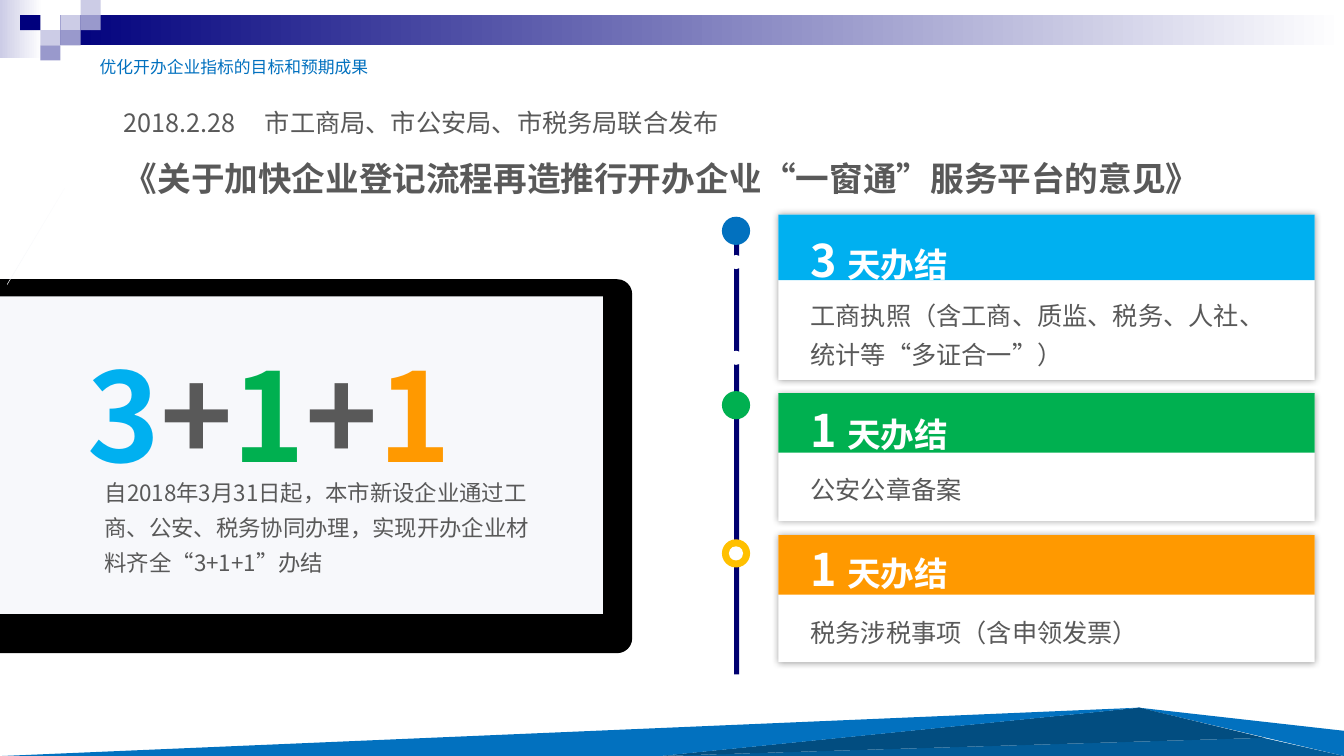
"""Build the slide on the 3+1+1 plan for opening a business."""
from typing import NamedTuple

from lxml import etree
from pptx import Presentation
from pptx.dml import color
from pptx.enum import shapes, text
from pptx.oxml import ns
from pptx.util import Emu, Pt

PX = 9144
SANS, DISPLAY = "Noto Sans CJK SC", "Noto Sans CJK JP"
WHITE, GREY, BLUE, NAVY = "FFFFFF", "595959", "0271BF", "00007D"
SKY, GREEN, ORANGE = "00B0F0", "00B050", "FF9900"
PALE, LILAC, SCREEN = "CCCCE6", "9999CC", "F7F8FB"
RECT = shapes.MSO_SHAPE.RECTANGLE
OVAL = shapes.MSO_SHAPE.OVAL
ROUNDED = shapes.MSO_SHAPE.ROUNDED_RECTANGLE


class Box(NamedTuple):
    """Left, top, width and height in px."""
    left: int
    top: int
    width: int
    height: int


class Span(NamedTuple):
    """A stretch of text in one format."""
    words: str
    size: int
    fill: str = GREY
    bold: bool = False
    font: str = SANS


class Line(NamedTuple):
    """A paragraph with its line height in points."""
    spans: list[Span]
    height: float
    tab: int = 0


class Card(NamedTuple):
    """A step: box, header, text position and wording."""
    box: Box
    header: Box
    title_top: int
    body_top: int
    days: str
    body: str
    fill: str


class Dot(NamedTuple):
    """A circle on the timeline."""
    top: int
    size: int
    fill: str


class Facet(NamedTuple):
    """A filled polygon."""
    points: list[tuple[int, int]]
    fill: str


TILES = [
    (60, 15, PALE), (80, 0, PALE), (80, 15, LILAC), (40, 30, PALE),
    (20, 15, NAVY), (60, 30, LILAC), (40, 45, LILAC),
]
CARDS = [
    Card(Box(772, 213, 532, 164), Box(772, 213, 532, 65), 208, 284, "3",
         "工商执照（含工商、质监、税务、人社、统计等“多证合一”）", SKY),
    Card(Box(772, 391, 532, 126), Box(772, 390, 532, 59), 377, 457, "1",
         "公安公章备案", GREEN),
    Card(Box(772, 531, 532, 126), Box(772, 531, 532, 59), 515, 599, "1",
         "税务涉税事项（含申领发票）", ORANGE),
]
DOTS = [
    Dot(183, 14, WHITE), Dot(388, 28, GREEN), Dot(348, 14, WHITE),
    Dot(535, 28, "FFC000"), Dot(542, 14, WHITE), Dot(253, 14, WHITE),
    Dot(215, 28, BLUE),
]
FACETS = [
    Facet([(1333, 750), (1129, 702), (1333, 725)], BLUE),
    Facet([(1333, 750), (1253, 732), (653, 750)], "025B98"),
    Facet([(1254, 732), (654, 750), (1130, 702)], "024D80"),
    Facet([(1131, 702), (2, 750), (655, 750)], BLUE),
    Facet([(64, 187), (7, 282), (7, 283)], SCREEN),
]


def rgb(value: str) -> color.RGBColor:
    """Turn a hex string into a colour."""
    return color.RGBColor.from_string(value)


def paint(shape, fill: str) -> None:
    """Fill a shape flatly, without outline or shadow."""
    shape.fill.solid()
    shape.fill.fore_color.rgb = rgb(fill)
    shape.line.fill.background()
    shape.shadow.inherit = False


def add_block(page, box: Box, fill: str, kind=RECT):
    """Add a flat preset shape."""
    shape = page.shapes.add_shape(kind, *(Emu(side * PX) for side in box))
    paint(shape, fill)
    return shape


def add_fade(page, box: Box, start: str) -> None:
    """Add a rectangle fading to white at the right."""
    shape = add_block(page, box, start)
    shape.fill.gradient()
    shape.fill.gradient_angle = 0
    for stop, tone in zip(shape.fill.gradient_stops, (start, WHITE)):
        stop.color.rgb = rgb(tone)


def add_glow(shape) -> None:
    """Give a shape a soft centred shadow."""
    effects = shape._element.spPr.find(ns.qn("a:effectLst"))
    shadow = etree.SubElement(effects, ns.qn("a:outerShdw"),
                              blurRad=str(Pt(5)), dist="0", algn="ctr", rotWithShape="0")
    tone = etree.SubElement(shadow, ns.qn("a:srgbClr"), val="000000")
    etree.SubElement(tone, ns.qn("a:alpha"), val="40000")


def add_facet(page, facet: Facet) -> None:
    """Draw a closed polygon."""
    first, *rest = facet.points
    builder = page.shapes.build_freeform(*first, scale=PX)
    builder.add_line_segments(rest, close=True)
    paint(builder.convert_to_shape(), facet.fill)


def add_words(page, box: Box, lines: list[Line]) -> None:
    """Add a wrapped text box."""
    frame = page.shapes.add_textbox(*(Emu(side * PX) for side in box)).text_frame
    settings = {"word_wrap": True, "auto_size": text.MSO_AUTO_SIZE.NONE,
                "vertical_anchor": text.MSO_ANCHOR.TOP}
    for name, value in settings.items():
        setattr(frame, name, value)
    for index, line in enumerate(lines):
        para = frame.add_paragraph() if index else frame.paragraphs[0]
        para.line_spacing = Pt(line.height)
        if line.tab:
            tabs = etree.SubElement(para._p.get_or_add_pPr(), ns.qn("a:tabLst"))
            etree.SubElement(tabs, ns.qn("a:tab"), pos=str(line.tab * PX), algn="l")
        for span in line.spans:
            run = para.add_run()
            run.text = span.words
            formats = {"size": Pt(span.size), "bold": span.bold, "name": span.font}
            for name, value in formats.items():
                setattr(run.font, name, value)
            run.font.color.rgb = rgb(span.fill)
            etree.SubElement(run._r.get_or_add_rPr(), ns.qn("a:ea"), typeface=span.font)


def add_card(page, card: Card) -> None:
    """Draw one step with its header and wording."""
    add_glow(add_block(page, card.box, WHITE))
    add_block(page, card.header, card.fill)
    title = [Span(card.days + " ", 32, WHITE, True, DISPLAY),
             Span("天办结", 24, WHITE, True, DISPLAY)]
    add_words(page, Box(794, card.title_top, 482, 80), [Line(title, 51)])
    add_words(page, Box(794, card.body_top, 482, 89), [Line([Span(card.body, 18)], 28)])


def main() -> None:
    """Build and save the deck."""
    deck = Presentation()
    deck.slide_width, deck.slide_height = Emu(1333 * PX), Emu(750 * PX)
    page = deck.slides.add_slide(deck.slide_layouts[6])
    add_fade(page, Box(0, 0, 42, 58), PALE)
    add_fade(page, Box(60, 15, 1273, 30), NAVY)
    for left, top, fill in TILES:
        add_block(page, Box(left, top, 20, 15), fill)
    tablet = add_block(page, Box(-122, 277, 749, 371), "000000", ROUNDED)
    tablet.adjustments[0] = 0.04
    add_block(page, Box(-99, 294, 697, 315), SCREEN)
    summary = "自2018年3月31日起，本市新设企业通过工商、公安、税务协同办理，实现开办企业材料齐全“3+1+1”办结"
    add_words(page, Box(94, 462, 450, 112), [Line([Span(summary, 16)], 25)])
    add_words(page, Box(113, 86, 1113, 116), [
        Line([Span("2018.2.28\t市工商局、市公安局、市税务局联合发布", 18)], 33, 140),
        Line([Span("《关于加快企业登记流程再造推行开办企业“一窗通”服务平台的意见》",
                   24, bold=True)], 43),
    ])
    add_block(page, Box(728, 242, 5, 427), "000070")
    for dot in DOTS:
        add_block(page, Box(730 - dot.size // 2, dot.top, dot.size, dot.size), dot.fill, OVAL)
    for card in CARDS:
        add_card(page, card)
    for facet in FACETS:
        add_facet(page, facet)
    formula = zip("3+1+1", (SKY, GREY, GREEN, GREY, ORANGE))
    add_words(page, Box(77, 283, 451, 203),
              [Line([Span(sign, 88, fill, True, DISPLAY) for sign, fill in formula], 141)])
    add_words(page, Box(89, 51, 305, 30),
              [Line([Span("优化开办企业指标的目标和预期成果", 12, BLUE)], 15)])
    deck.save("out.pptx")


if __name__ == "__main__":
    main()
